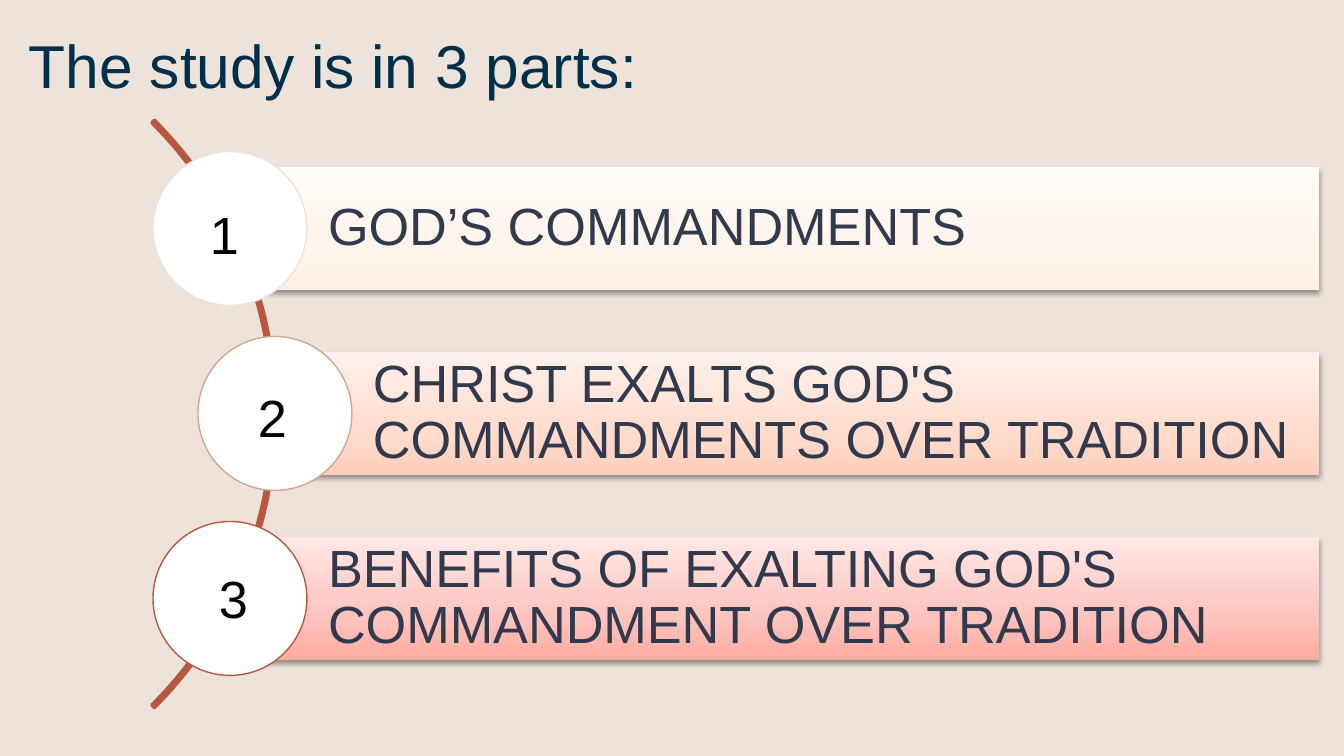
from lxml.etree import SubElement
from pptx import Presentation
from pptx.dml.color import RGBColor
from pptx.enum.shapes import MSO_SHAPE
from pptx.enum.text import MSO_ANCHOR, MSO_AUTO_SIZE, PP_ALIGN
from pptx.oxml import parse_xml
from pptx.oxml.ns import nsdecls, qn
from pptx.util import Pt

PX = 914400 / 134.4
FONT = "Arial"

BACKGROUND = RGBColor(0xED, 0xE3, 0xDA)
TITLE = RGBColor(0x00, 0x2F, 0x4A)
TEXT = RGBColor(0x31, 0x39, 0x4D)
RUST = RGBColor(0xB8, 0x57, 0x41)
TAN = RGBColor(0xD1, 0xA5, 0x8F)
WHITE = RGBColor(0xFF, 0xFF, 0xFF)
BLACK = RGBColor(0x00, 0x00, 0x00)

# Gradient colours run from the bottom of a bar to its top
CREAM = [RGBColor(0xFF, 0xF1, 0xE5), RGBColor(0xFF, 0xF5, 0xEC), RGBColor(0xFF, 0xFB, 0xF7)]
PEACH = [RGBColor(0xFF, 0xCF, 0xBB), RGBColor(0xFF, 0xDC, 0xCE), RGBColor(0xFF, 0xF1, 0xEC)]
PINK = [RGBColor(0xFE, 0xAB, 0xA1), RGBColor(0xFD, 0xC4, 0xBE), RGBColor(0xFF, 0xE8, 0xE5)]
STOPS = [0, 35, 100]

BAR_TOP, BAR_STEP, BAR_HEIGHT, BAR_RIGHT = 167, 185, 123, 1319
CIRCLE = 154

# Bar text, bar left, gradient, circle outline, number position
PARTS = [
    ("GOD’S COMMANDMENTS", 230, CREAM, BACKGROUND, (176, 196)),
    ("CHRIST EXALTS GOD'S COMMANDMENTS OVER TRADITION", 275, PEACH, TAN, (224, 379)),
    ("BENEFITS OF EXALTING GOD'S COMMANDMENT OVER TRADITION", 230, PINK, RUST, (185, 560)),
]


def px(n):
    return round(n * PX)


class Deck:
    def __init__(self, width, height):
        self.prs = Presentation()
        self.prs.slide_width, self.prs.slide_height = px(width), px(height)
        self.s = self.prs.slides.add_slide(self.prs.slide_layouts[5])
        self.s.background.fill.solid()
        self.s.background.fill.fore_color.rgb = BACKGROUND

    def set_text(self, tf, text, size, color, align, insets=None):
        tf.word_wrap = True
        tf.text = text
        if insets:
            tf.margin_left, tf.margin_top, tf.margin_right, tf.margin_bottom = map(px, insets)
        p = tf.paragraphs[0]
        p.alignment = align
        font = p.runs[0].font
        font.name, font.size, font.color.rgb = FONT, Pt(size), color
        return p

    def shape(self, kind, x, y, w, h):
        sp = self.s.shapes.add_shape(kind, px(x), px(y), px(w), px(h))
        sp.shadow.inherit = False
        return sp

    def title(self, text, x, y, w, h):
        sp = self.s.shapes.title
        sp.left, sp.top, sp.width, sp.height = px(x), px(y), px(w), px(h)
        tf = sp.text_frame
        tf.auto_size = MSO_AUTO_SIZE.NONE
        tf.vertical_anchor = MSO_ANCHOR.MIDDLE
        self.set_text(tf, text, 32.4, TITLE, PP_ALIGN.LEFT, (13, 13, 13, 13))

    def arc(self, x, y, size):
        sp = self.shape(MSO_SHAPE.BLOCK_ARC, x, y, size, size)
        # 315 and 45 degrees, then the band thickness
        for i, value in enumerate((189, 27, 0.004)):
            sp.adjustments[i] = value
        sp.fill.background()
        sp.line.color.rgb, sp.line.width = RUST, Pt(2)

    def bar(self, text, x, y, w, h, colors):
        sp = self.shape(MSO_SHAPE.RECTANGLE, x, y, w, h)
        sp.line.fill.background()
        sp.fill.gradient()
        sp.fill.gradient_angle = 90
        stops = sp.element.spPr.find(qn("a:gradFill")).find(qn("a:gsLst"))
        for old in list(stops):
            stops.remove(old)
        for pos, color in zip(STOPS, colors):
            gs = SubElement(stops, qn("a:gs"), pos=str(pos * 1000))
            SubElement(gs, qn("a:srgbClr"), val=str(color))
        sp.element.spPr.find(qn("a:effectLst")).append(parse_xml(
            f'<a:outerShdw {nsdecls("a")} blurRad="{Pt(3.1)}" dist="{Pt(1.6)}" dir="5400000" '
            'rotWithShape="0"><a:srgbClr val="000000"><a:alpha val="38000"/></a:srgbClr>'
            '</a:outerShdw>'))
        tf = sp.text_frame
        tf.vertical_anchor = MSO_ANCHOR.MIDDLE
        p = self.set_text(tf, text, 28, TEXT, PP_ALIGN.LEFT, (98, 11, 11, 11))
        p.line_spacing = 0.9

    def circle(self, x, y, size, outline):
        sp = self.shape(MSO_SHAPE.OVAL, x, y, size, size)
        sp.fill.solid()
        sp.fill.fore_color.rgb = WHITE
        sp.line.color.rgb, sp.line.width = outline, Pt(0.75)

    def number(self, text, x, y):
        sp = self.s.shapes.add_textbox(px(x), px(y), px(97), px(77))
        self.set_text(sp.text_frame, text, 28, BLACK, PP_ALIGN.CENTER)


def main():
    deck = Deck(1344, 756)
    deck.title("The study is in 3 parts:", 16, 12, 918, 104)
    deck.arc(-554, -1, 830)

    # Bars with a circle centred on each left end
    for i, (text, left, colors, outline, _) in enumerate(PARTS):
        top = BAR_TOP + i * BAR_STEP
        deck.bar(text, left, top, BAR_RIGHT - left, BAR_HEIGHT, colors)
        deck.circle(left - CIRCLE / 2, top + (BAR_HEIGHT - CIRCLE) / 2, CIRCLE, outline)

    # Numbers over the circles
    for i, part in enumerate(PARTS, 1):
        deck.number(str(i), *part[-1])

    deck.prs.save("out.pptx")


if __name__ == "__main__":
    main()
